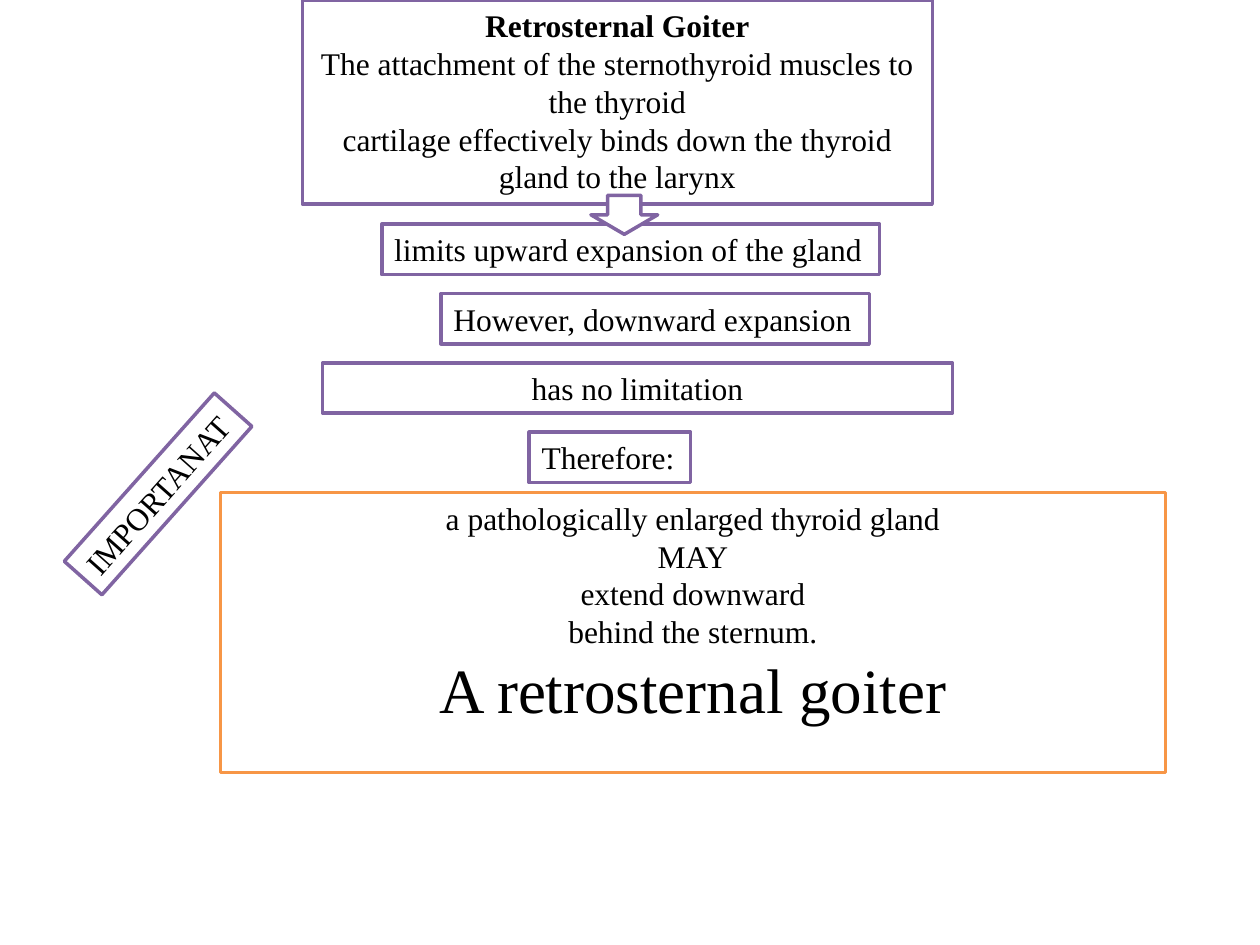
from pptx import Presentation
from pptx import util as u
from pptx.dml import color
from pptx.enum import shapes, text

PURPLE, ORANGE, WHITE, BLACK = "8064A2", "F79646", "FFFFFF", "000000"


def rgb(value):
    return color.RGBColor.from_string(value)


class Deck:
    font = {"name": "Times New Roman", "size": u.Pt(18), "bold": False}
    frame = {
        "auto_size": text.MSO_AUTO_SIZE.NONE,
        "vertical_anchor": text.MSO_ANCHOR.TOP,
    }

    def __init__(self, width, height):
        self.prs = Presentation()
        self.prs.slide_width = u.Inches(width)
        self.prs.slide_height = u.Inches(height)
        self.s = self.prs.slides.add_slide(self.prs.slide_layouts[6])

    def shape(self, kind, at, line=PURPLE):
        sp = self.s.shapes.add_shape(kind, *map(u.Inches, at))
        sp.shadow.inherit = False
        sp.fill.solid()
        sp.fill.fore_color.rgb = rgb(WHITE)
        sp.line.color.rgb = rgb(line)
        sp.line.width = u.Pt(2)
        return sp

    def box(self, at, lines, line=PURPLE, centred=True, rotation=0):
        sp = self.shape(shapes.MSO_SHAPE.RECTANGLE, at, line)
        sp.rotation = rotation
        tf = sp.text_frame
        for key, value in {**self.frame, "word_wrap": centred}.items():
            setattr(tf, key, value)
        for i, (words, changes) in enumerate(lines):
            p = tf.paragraphs[0] if i == 0 else tf.add_paragraph()
            p.alignment = text.PP_ALIGN.CENTER if centred else text.PP_ALIGN.LEFT
            r = p.add_run()
            r.text = words
            r.font.color.rgb = rgb(BLACK)
            for key, value in {**self.font, **changes}.items():
                setattr(r.font, key, value)

    def arrow(self, at):
        self.shape(shapes.MSO_SHAPE.DOWN_ARROW, at)


def main():
    deck = Deck(10, 7.5)
    deck.box((2.4, 0, 5, 1.62), [
        ("Retrosternal Goiter", {"bold": True}),
        ("The attachment of the sternothyroid muscles to the thyroid", {}),
        ("cartilage effectively binds down the thyroid gland to the larynx", {}),
    ])
    deck.box((0.36, 3.72, 1.79, 0.4), [("IMPORTANAT", {})],
             centred=False, rotation=311.7)

    steps = [
        (3.03, 3.95, "limits upward expansion of the gland", False),
        (3.5, 3.4, "However, downward expansion", False),
        (2.56, 5, "has no limitation", True),
        (4.2, 1.28, "Therefore:", False),
    ]
    top, pitch = 1.78, 0.55
    for i, (left, width, words, centred) in enumerate(steps):
        deck.box((left, top + i * pitch, width, 0.4), [(words, {})], centred=centred)

    deck.box((1.75, 3.91, 7.5, 2.22), [
        ("a pathologically enlarged thyroid gland", {}),
        ("MAY", {}),
        ("extend downward", {}),
        ("behind the sternum.", {}),
        ("A retrosternal goiter", {"size": u.Pt(36)}),
    ], line=ORANGE)
    deck.arrow((4.69, 1.55, 0.53, 0.31))
    deck.prs.save("out.pptx")


if __name__ == "__main__":
    main()
